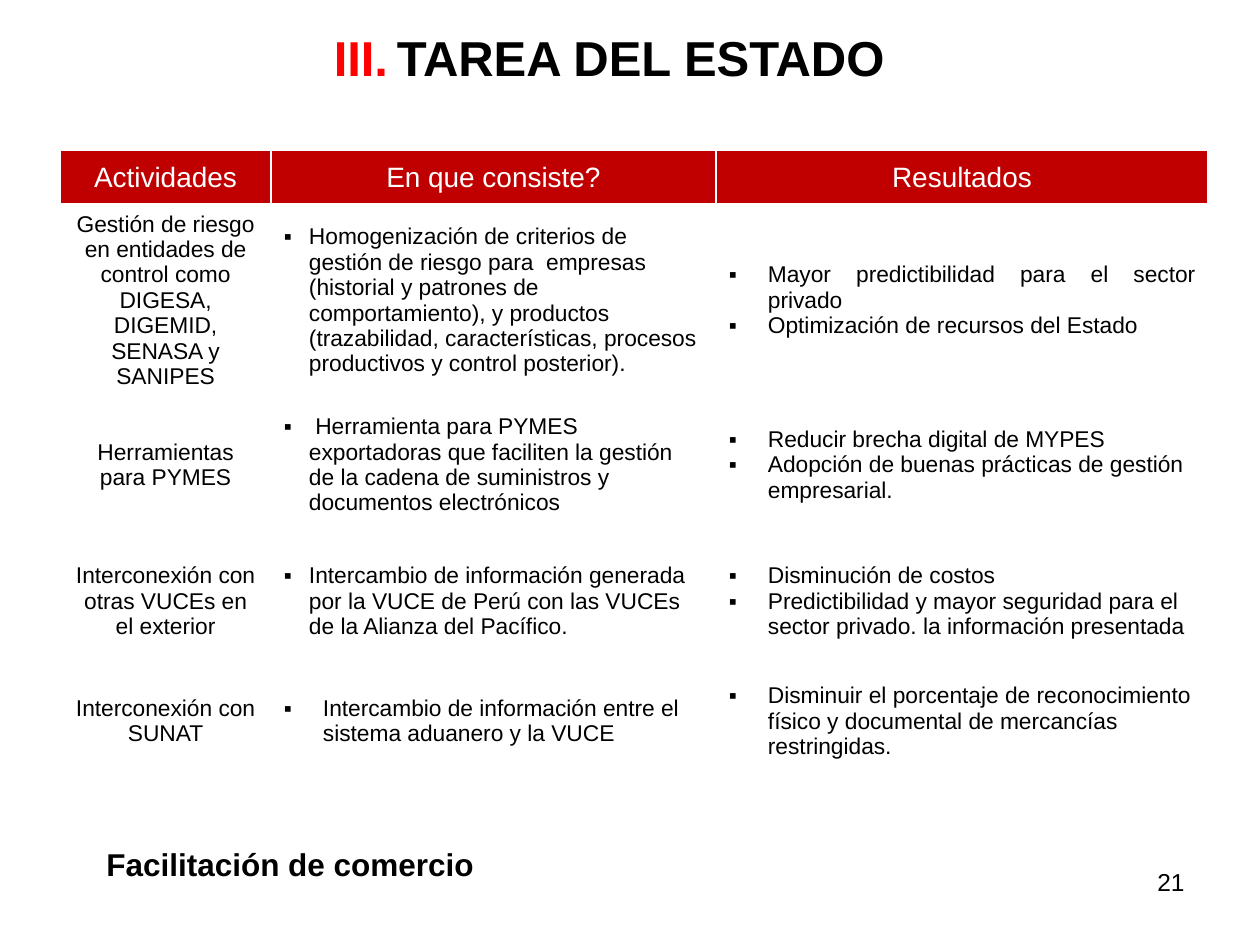
from lxml import etree
from pptx import Presentation
from pptx.dml.color import RGBColor
from pptx.enum.text import MSO_ANCHOR, PP_ALIGN
from pptx.oxml.ns import qn
from pptx.util import Pt

PX = 914400 / 126
LEFT, CENTER, RIGHT, JUSTIFY = PP_ALIGN.LEFT, PP_ALIGN.CENTER, PP_ALIGN.RIGHT, PP_ALIGN.JUSTIFY
MIDDLE = MSO_ANCHOR.MIDDLE
WHITE, BLACK, RED, DARK_RED = "FFFFFF", "000000", "FF0000", "C00000"


def px(*lengths):
    """Turn pixel lengths into EMU."""
    return [round(length * PX) for length in lengths]


def add_run(paragraph, text, size, color, bold=False):
    run = paragraph.add_run()
    run.text = text
    run.font.name = "Arial"
    run.font.size = Pt(size)
    run.font.bold = bold
    run.font.color.rgb = RGBColor.from_string(color)


prs = Presentation()
prs.slide_width, prs.slide_height = px(1260, 945)
slide = prs.slides.add_slide(prs.slide_layouts[6])

# Each cell is a list of paragraphs: (text, alignment, bullet indent in px)
headers = ["Actividades", "En que consiste?", "Resultados"]
activities = [
    [
        [("Gestión de riesgo en entidades de control como DIGESA, DIGEMID, SENASA y SANIPES", CENTER, 0)],
        [("Homogenización de criterios de gestión de riesgo para  empresas (historial y patrones de "
          "comportamiento), y productos (trazabilidad, características, procesos productivos y "
          "control posterior).", LEFT, 25)],
        [("Mayor predictibilidad para el sector privado", JUSTIFY, 39),
         ("Optimización de recursos del Estado", JUSTIFY, 39)],
    ],
    [
        [("Herramientas para PYMES", CENTER, 0)],
        [(" Herramienta para PYMES exportadoras que faciliten la gestión de la cadena de suministros "
          "y documentos electrónicos", LEFT, 25)],
        [("Reducir brecha digital de MYPES", JUSTIFY, 39),
         ("Adopción de buenas prácticas de gestión empresarial.", LEFT, 39)],
    ],
    [
        [("Interconexión con otras VUCEs en el exterior", CENTER, 0)],
        [("Intercambio de información generada por la VUCE de Perú con las VUCEs de la Alianza "
          "del Pacífico.", LEFT, 25)],
        [("Disminución de costos", JUSTIFY, 39),
         ("Predictibilidad y mayor seguridad para el sector privado. la información presentada", LEFT, 39)],
    ],
    [
        [("Interconexión con SUNAT", CENTER, 0)],
        [("Intercambio de información entre el sistema aduanero y la VUCE", LEFT, 39)],
        [("Disminuir el porcentaje de reconocimiento físico y documental de mercancías "
          "restringidas.", LEFT, 39)],
    ],
]
rows = [[[(header, CENTER, 0)] for header in headers]] + activities
column_widths = [211, 445, 492]
row_heights = [55, 191, 138, 135, 105]

table = slide.shapes.add_table(
    len(rows), len(headers), *px(60, 150, sum(column_widths), sum(row_heights))).table
for column, width in zip(table.columns, px(*column_widths)):
    column.width = width
for row, height in zip(table.rows, px(*row_heights)):
    row.height = height

for r, row in enumerate(rows):
    is_header = r == 0
    for c, paragraphs in enumerate(row):
        cell = table.cell(r, c)
        cell.vertical_anchor = MIDDLE
        cell.margin_left = cell.margin_right = px(13)[0]
        cell.margin_top = cell.margin_bottom = px(6)[0]

        tc_pr = cell._tc.get_or_add_tcPr()
        for side in ("lnL", "lnR", "lnT", "lnB"):
            thick = (is_header and side == "lnB") or (r == 1 and side == "lnT")
            border = etree.SubElement(tc_pr, qn(f"a:{side}"), w=str(Pt(3 if thick else 1)))
            line_fill = etree.SubElement(border, qn("a:solidFill"))
            etree.SubElement(line_fill, qn("a:srgbClr"), val=WHITE)
        cell.fill.solid()
        cell.fill.fore_color.rgb = RGBColor.from_string(DARK_RED if is_header else WHITE)

        for i, (text, alignment, indent) in enumerate(paragraphs):
            frame = cell.text_frame
            paragraph = frame.paragraphs[0] if i == 0 else frame.add_paragraph()
            paragraph.alignment = alignment
            if indent:
                hanging = px(indent)[0]
                p_pr = paragraph._p.get_or_add_pPr()
                p_pr.set("marL", str(hanging))
                p_pr.set("indent", str(-hanging))
                etree.SubElement(p_pr, qn("a:buFont"), typeface="Arial")
                etree.SubElement(p_pr, qn("a:buChar"), char="▪")
            add_run(paragraph, text, 16 if is_header else 13, WHITE if is_header else BLACK)

# Title, footer and page number: box, alignment, runs
captions = [
    ((63, 21, 1092, 189), CENTER,
     [("III.\t", 28, RED, True), ("TAREA DEL ESTADO", 28, BLACK, True)]),
    ((94, 839, 407, 50), LEFT, [("Facilitación de comercio", 18, BLACK, True)]),
    ((903, 861, 294, 66), RIGHT, [("21", 14, BLACK, False)]),
]
for box, alignment, runs in captions:
    frame = slide.shapes.add_textbox(*px(*box)).text_frame
    frame.word_wrap = True
    paragraph = frame.paragraphs[0]
    paragraph.alignment = alignment
    for run in runs:
        add_run(paragraph, *run)

prs.save("out.pptx")
